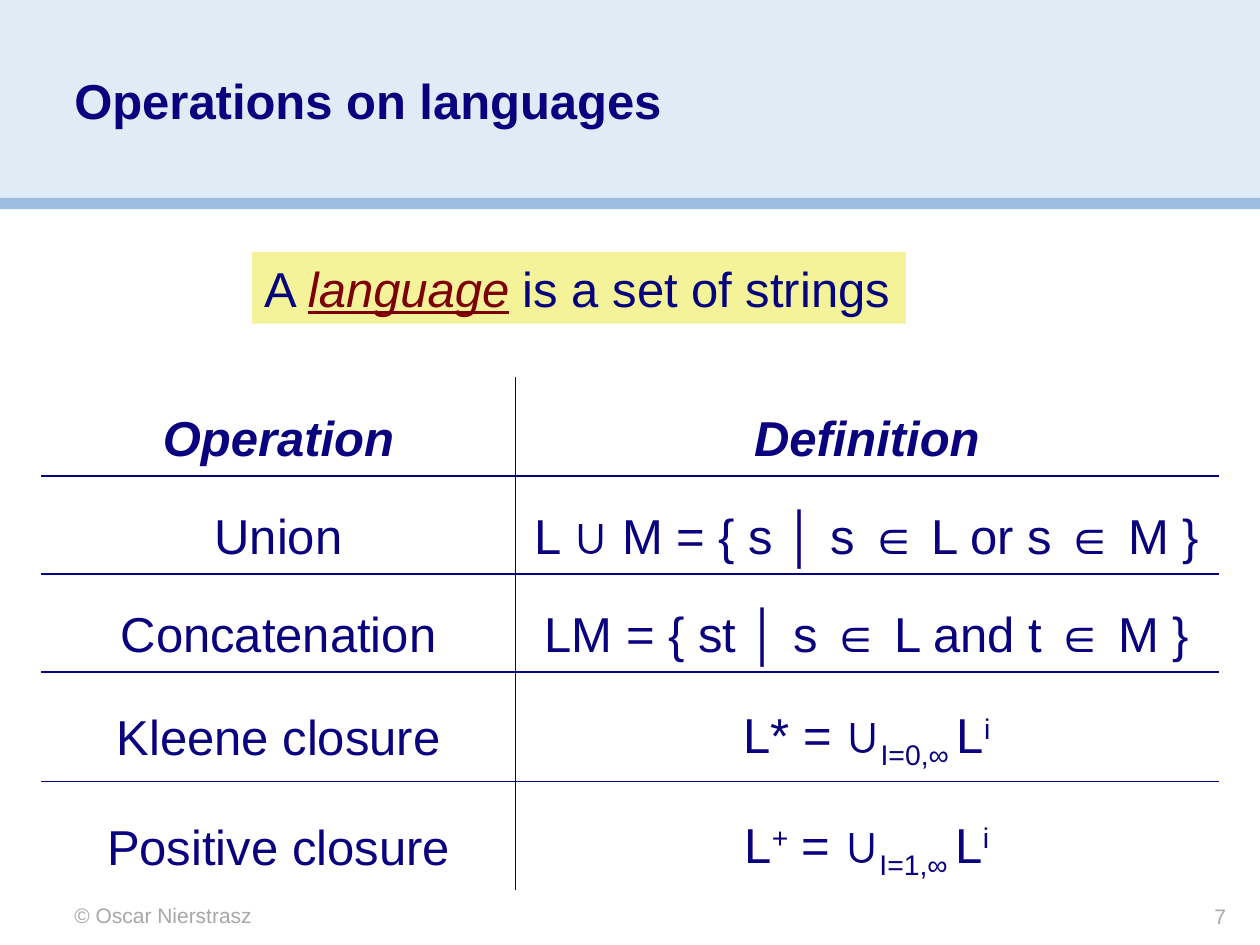
import pptx
import pptx.util
import pptx.dml.color
import pptx.enum.shapes
import pptx.enum.text
import pptx.oxml
import pptx.oxml.ns

COLORS = {
    "band": "E1EBF5",
    "stripe": "9CBDDE",
    "heading": "0A017F",
    "ink": "05027D",
    "term": "7E0007",
    "note": "F5F399",
    "footer": "A7A7A7",
}
FONT = "Arial"
BODY_SIZE = 28
FOOTER_SIZE = 12
SUB, SUPER = -25000, 30000
ALIGN = pptx.enum.text.PP_ALIGN

COLUMN_WIDTHS = [3.76, 5.58]
ROW_HEIGHTS = [0.73, 0.73, 0.73, 0.82, 0.82]


def closure(mark, mark_baseline, start):
    """Runs of (text, baseline) defining a closure as a union from start."""
    return [("L", 0), (mark, mark_baseline), (" = ∪", 0),
            (f"I={start},∞ ", SUB), ("L", 0), ("i", SUPER)]


OPERATIONS = [
    ("Operation", [("Definition", 0)]),
    ("Union", [("L ∪ M = { s │ s ∈ L or s ∈ M }", 0)]),
    ("Concatenation", [("LM = { st │ s ∈ L and t ∈ M }", 0)]),
    ("Kleene closure", closure("*", 0, 0)),
    ("Positive closure", closure("+", SUPER, 1)),
]


def inches(*lengths):
    return [pptx.util.Inches(length) for length in lengths]


def rgb(color):
    return pptx.dml.color.RGBColor.from_string(COLORS[color])


def style(paragraph, size, color, align=ALIGN.LEFT):
    paragraph.alignment = align
    paragraph.font.name = FONT
    paragraph.font.size = pptx.util.Pt(size)
    paragraph.font.color.rgb = rgb(color)


def add_band(slide, top, height, color):
    band = slide.shapes.add_shape(
        pptx.enum.shapes.MSO_SHAPE.RECTANGLE, *inches(0, top, 10, height))
    band.shadow.inherit = False
    band.fill.solid()
    band.fill.fore_color.rgb = rgb(color)
    band.line.fill.background()


def add_label(slide, text, box, size, color, align=ALIGN.LEFT):
    """Add a text box without insets and return its paragraph."""
    frame = slide.shapes.add_textbox(*inches(*box)).text_frame
    frame.word_wrap = True
    frame.margin_left = frame.margin_right = 0
    frame.margin_top = frame.margin_bottom = 0
    paragraph = frame.paragraphs[0]
    paragraph.text = text
    style(paragraph, size, color, align)
    return paragraph


def add_statement(slide):
    statement = slide.shapes.add_textbox(*inches(2, 2, 5.19, 0.57))
    statement.fill.solid()
    statement.fill.fore_color.rgb = rgb("note")
    frame = statement.text_frame
    frame.word_wrap = False
    frame.auto_size = pptx.enum.text.MSO_AUTO_SIZE.SHAPE_TO_FIT_TEXT
    paragraph = frame.paragraphs[0]
    style(paragraph, BODY_SIZE, "ink")
    paragraph.space_before = pptx.util.Pt(0.3 * BODY_SIZE)
    paragraph.add_run().text = "A "
    term = paragraph.add_run()
    term.text = "language"
    term.font.italic = term.font.underline = True
    term.font.color.rgb = rgb("term")
    paragraph.add_run().text = " is a set of strings"


def add_borders(cell, sides):
    """Rule the given sides, listed in schema order (L, R, T, B)."""
    properties = cell._tc.get_or_add_tcPr()
    for position, side in enumerate(sides):
        properties.insert(position, pptx.oxml.parse_xml(
            f'<a:ln{side} {pptx.oxml.ns.nsdecls("a")} w="12700"><a:solidFill>'
            f'<a:srgbClr val="{COLORS["ink"]}"/></a:solidFill></a:ln{side}>'))


def fill_cell(cell, runs, is_header):
    cell.fill.background()
    cell.vertical_anchor = pptx.enum.text.MSO_ANCHOR.MIDDLE
    paragraph = cell.text_frame.paragraphs[0]
    style(paragraph, BODY_SIZE, "heading", ALIGN.CENTER)
    paragraph.font.bold = paragraph.font.italic = is_header
    paragraph.line_spacing = 1.45
    paragraph.space_before = pptx.util.Pt(0.2 * BODY_SIZE)
    for text, baseline in runs:
        run = paragraph.add_run()
        run.text = text
        if baseline:
            run._r.get_or_add_rPr().set("baseline", str(baseline))


def add_operations_table(slide):
    table = slide.shapes.add_table(
        len(OPERATIONS), len(COLUMN_WIDTHS),
        *inches(0.33, 3, sum(COLUMN_WIDTHS), sum(ROW_HEIGHTS))).table
    table.first_row = table.horz_banding = False
    for column, width in zip(table.columns, inches(*COLUMN_WIDTHS)):
        column.width = width
    for row, height in zip(table.rows, inches(*ROW_HEIGHTS)):
        row.height = height
    last = len(OPERATIONS) - 1
    for row, (operation, definition) in enumerate(OPERATIONS):
        for column, runs in enumerate([[(operation, 0)], definition]):
            cell = table.cell(row, column)
            fill_cell(cell, runs, row == 0)
            sides = ["R" if column == 0 else "L"]
            sides += ["T"] if row > 0 else []
            sides += ["B"] if row < last else []
            add_borders(cell, sides)


def main():
    presentation = pptx.Presentation()
    presentation.slide_width, presentation.slide_height = inches(10, 7.5)
    slide = presentation.slides.add_slide(presentation.slide_layouts[6])
    add_band(slide, 0, 1.58, "band")
    add_band(slide, 1.57, 0.09, "stripe")
    title = add_label(slide, "Operations on languages",
                      (0.59, 0.61, 8.83, 0.89), BODY_SIZE, "heading")
    title.font.bold = True
    title.line_spacing = 0.9
    add_operations_table(slide)
    add_statement(slide)
    add_label(slide, "7", (8.25, 7.17, 1.48, 0.2), FOOTER_SIZE, "footer",
              ALIGN.RIGHT)
    add_label(slide, "© Oscar Nierstrasz", (0.59, 7.16, 4.17, 0.2),
              FOOTER_SIZE, "footer")
    presentation.save("out.pptx")


if __name__ == "__main__":
    main()
